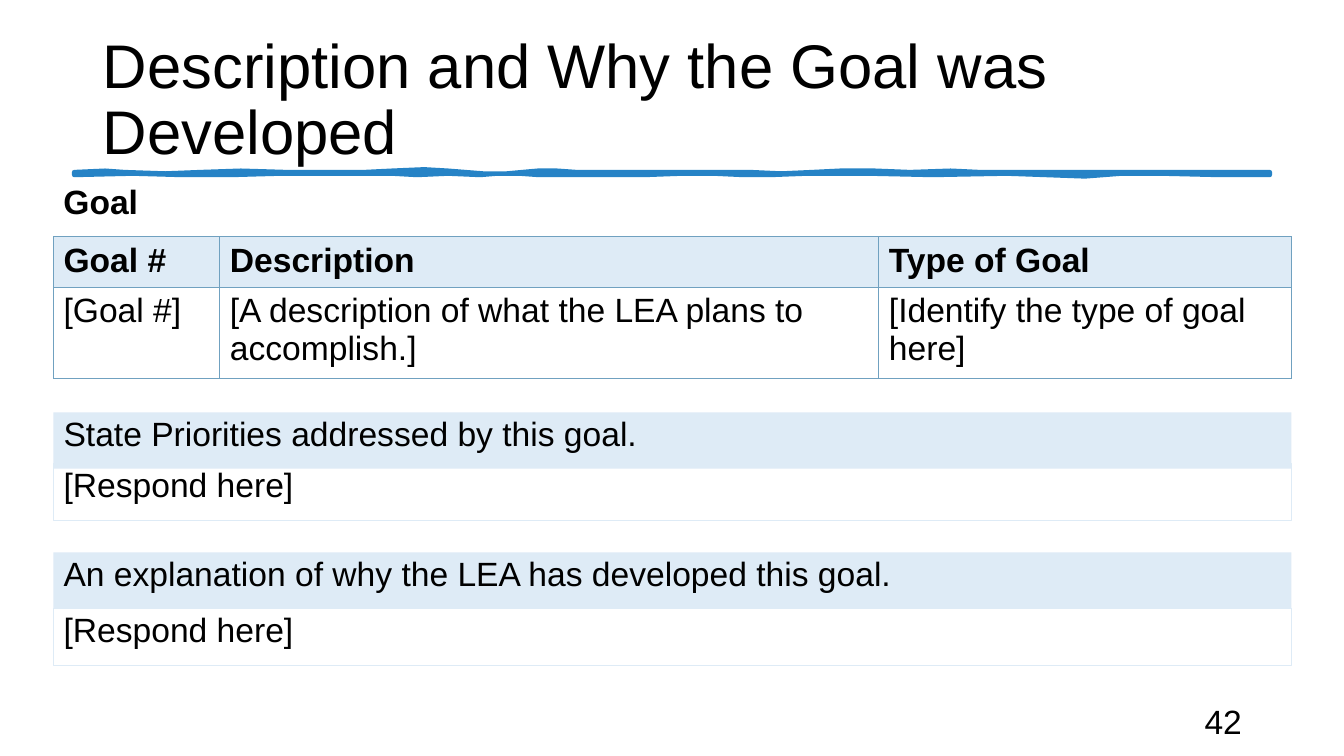
from lxml.etree import SubElement
from pptx import Presentation
from pptx.dml.color import RGBColor
from pptx.enum.text import MSO_ANCHOR, MSO_AUTO_SIZE, PP_ALIGN
from pptx.oxml.ns import qn
from pptx.util import Pt

COLORS = {"text": "000000", "pale": "DEEBF6", "grid": "70A1C0", "wave": "2683C6"}
LEFT, WIDE = 38.2, 884.2
PANELS = [
    (294.5, "State Priorities addressed by this goal.", True),
    (331.2, "[Respond here]", False),
    (394.6, "An explanation of why the LEA has developed this goal.", True),
    (434.9, "[Respond here]", False),
]
COLS = [118.8, 470.8, 294.6]
ROWS = [
    ["Goal #", "Description", "Type of Goal"],
    ["[Goal #]", "[A description of what the LEA plans to accomplish.]",
     "[Identify the type of goal here]"],
]
UPPER = [
    (53, 123.1), (75, 122.5), (89, 123.1), (118, 123.8), (143, 123.1),
    (172, 122.5), (205, 123.1), (260, 123.2), (280, 122), (303, 121.4),
    (320, 122), (345, 123.9), (362, 123.9), (384, 122.4), (398, 122),
    (412, 123), (465, 122.9), (500, 123.3), (520, 122.7), (536, 123.1),
    (558, 123.8), (580, 123.1), (600, 121.8), (625, 122.4), (650, 123.3),
    (679, 122.2), (700, 123), (741, 123.1), (775, 122.9), (803, 122.7),
    (850, 123.4), (907, 123.1),
]
LOWER = [
    (907, 124.6), (871, 125), (830, 124), (801, 124.3), (775, 125.7),
    (747, 124.8), (719, 124.4), (666, 124.7), (621, 124.5), (576, 124.4),
    (550, 125.2), (531, 124.8), (510, 123.8), (487, 124.5), (460, 125.4),
    (425, 124.7), (385, 125), (371, 124.5), (355, 124.1), (343, 124.7),
    (320, 124.2), (298, 125), (280, 124.2), (236, 124.4), (200, 124.5),
    (165, 125.3), (130, 124.8), (95, 123.5), (53, 124.6),
]


def tint(name):
    return RGBColor.from_string(COLORS[name])


def write(frame, text, size=24, bold=False, gap=0, space=0.9,
          align=PP_ALIGN.LEFT, anchor=MSO_ANCHOR.TOP):
    frame.word_wrap = True
    frame.vertical_anchor = anchor
    para = frame.paragraphs[0]
    para.alignment = align
    para.line_spacing = space
    para.space_before = Pt(gap)
    run = para.add_run()
    run.text = text
    font = run.font
    font.name, font.size, font.bold = "Arial", Pt(size), bold
    font.color.rgb = tint("text")
    return para


def place(shape, left, top, wide, high):
    shape.left, shape.top = Pt(left), Pt(top)
    shape.width, shape.height = Pt(wide), Pt(high)


def add_label(slide, box, text, **style):
    label = slide.shapes.add_textbox(*map(Pt, box))
    write(label.text_frame, text, **style)


def add_panel(holder, top, text, filled):
    place(holder, LEFT, top, WIDE, 40.3)
    holder.text_frame.auto_size = MSO_AUTO_SIZE.NONE
    props = write(holder.text_frame, text, gap=10)._p.get_or_add_pPr()
    props.set("marL", "0")
    props.set("indent", "0")
    SubElement(props, qn("a:buNone"))
    if filled:
        holder.fill.solid()
        holder.fill.fore_color.rgb = tint("pale")
        holder.line.fill.background()
    else:
        holder.fill.background()
        holder.line.color.rgb = tint("pale")
        holder.line.width = Pt(0.75)


def add_edges(cell):
    props = cell._tc.get_or_add_tcPr()
    for side in ("lnL", "lnR", "lnT", "lnB"):
        edge = SubElement(props, qn(f"a:{side}"), w=str(Pt(0.75)))
        fill = SubElement(edge, qn("a:solidFill"))
        SubElement(fill, qn("a:srgbClr"), val=COLORS["grid"])


def add_goals(slide):
    box = map(Pt, (LEFT, 169.2, WIDE, 100.3))
    table = slide.shapes.add_table(len(ROWS), len(COLS), *box).table
    table.first_row = table.horz_banding = False
    for col, wide in zip(table.columns, COLS):
        col.width = Pt(wide)
    for row, high in zip(table.rows, (36, 64.3)):
        row.height = Pt(high)
    for r, texts in enumerate(ROWS):
        for c, text in enumerate(texts):
            cell = table.cell(r, c)
            write(cell.text_frame, text, bold=r == 0, space=1)
            add_edges(cell)
            if r == 0:
                cell.fill.solid()
                cell.fill.fore_color.rgb = tint("pale")
            else:
                cell.fill.background()


def add_wave(slide):
    start, *rest = UPPER + LOWER
    pen = slide.shapes.build_freeform(*start, scale=Pt(1))
    pen.add_line_segments(rest, close=True)
    wave = pen.convert_to_shape()
    wave.shadow.inherit = False
    wave.fill.solid()
    wave.fill.fore_color.rgb = tint("wave")
    wave.line.color.rgb = tint("wave")
    wave.line.width = Pt(3.25)


def main():
    """Build the goal description slide and save it."""
    deck = Presentation()
    deck.slide_width, deck.slide_height = Pt(960), Pt(540)
    slide = deck.slides.add_slide(deck.slide_layouts.get_by_name("Comparison"))
    title, *bodies = slide.placeholders
    place(title, 66.2, 20.2, 828, 104.4)
    title.text_frame.auto_size = MSO_AUTO_SIZE.NONE
    write(title.text_frame, "Description and Why the Goal was Developed",
          size=44, anchor=MSO_ANCHOR.MIDDLE)
    add_label(slide, (LEFT, 128.9, 239, 38.2), "Goal", bold=True, gap=10)
    add_goals(slide)
    for holder, panel in zip(bodies, PANELS):
        add_panel(holder, *panel)
    add_label(slide, (678.2, 500.4, 216, 28.8), "42", space=1,
              align=PP_ALIGN.RIGHT, anchor=MSO_ANCHOR.MIDDLE)
    add_wave(slide)
    deck.save("out.pptx")


if __name__ == "__main__":
    main()
